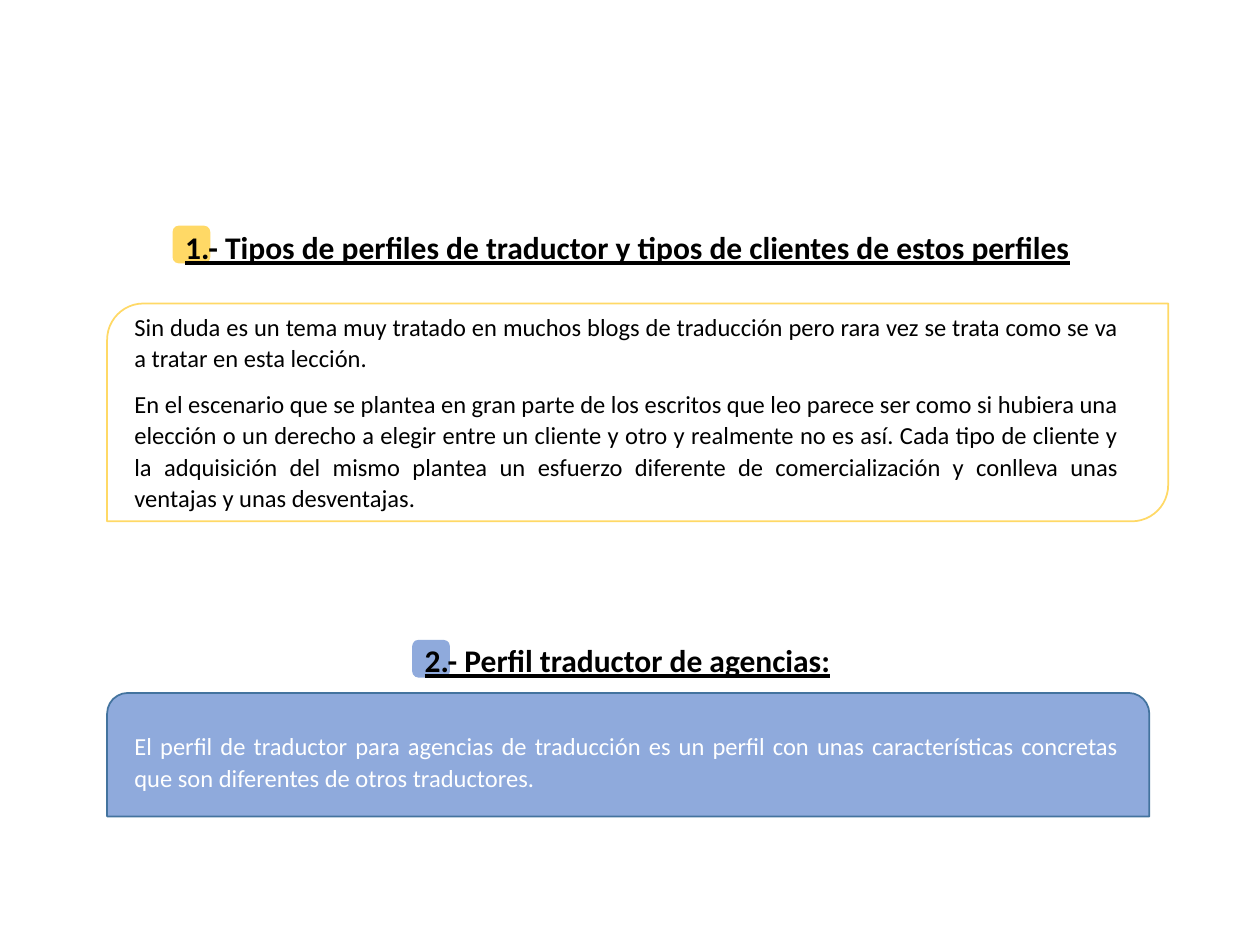
from typing import NamedTuple

from pptx import Presentation
from pptx.dml.color import RGBColor
from pptx.enum import shapes, text
from pptx.util import Cm, Pt

YELLOW, BLUE, DARK_BLUE = "FFD966", "8FAADC", "43739E"
BLACK, WHITE = "000000", "FFFFFF"


class Box(NamedTuple):
    """Left, top, width and height in centimetres."""
    left: float
    top: float
    width: float
    height: float

    def lengths(self):
        return [Cm(value) for value in self]


class Panel(NamedTuple):
    box: Box
    outline: shapes.MSO_SHAPE
    fill: str | None = None
    line: str | None = None


class Passage(NamedTuple):
    box: Box
    paragraphs: list[str]
    color: str = BLACK
    heading: bool = False
    wrap: bool = True


MARKER = 0.76
HEADING_HEIGHT = 1.09
PANEL_LEFT, TEXT_LEFT, TEXT_WIDTH = 2.16, 2.46, 20.35
INTRO_TOP, INTRO_HEIGHT = 6.12, 4.39

agency_panel = Panel(Box(PANEL_LEFT, 13.97, 21.01, 2.49),
                     shapes.MSO_SHAPE.ROUND_2_SAME_RECTANGLE, BLUE, DARK_BLUE)
markers = [Panel(Box(left, top, MARKER, MARKER), shapes.MSO_SHAPE.ROUNDED_RECTANGLE, fill)
           for left, top, fill in [(3.48, 4.55, YELLOW), (8.31, 12.9, BLUE)]]
intro_frame = Panel(Box(PANEL_LEFT, INTRO_TOP, 21.39, INTRO_HEIGHT),
                    shapes.MSO_SHAPE.ROUND_2_DIAG_RECTANGLE, line=YELLOW)

types_heading = Passage(
    Box(3.48, 4.42, 18.75, HEADING_HEIGHT),
    ["1.- Tipos de perfiles de traductor y tipos de clientes de estos perfiles"],
    heading=True)
intro = Passage(
    Box(TEXT_LEFT, INTRO_TOP, TEXT_WIDTH, INTRO_HEIGHT),
    ["Sin duda es un tema muy tratado en muchos blogs de traducción pero rara vez "
     "se trata como se va a tratar en esta lección.",
     "En el escenario que se plantea en gran parte de los escritos que leo parece ser "
     "como si hubiera una elección o un derecho a elegir entre un cliente y otro y "
     "realmente no es así. Cada tipo de cliente y la adquisición del mismo plantea un "
     "esfuerzo diferente de comercialización y conlleva unas ventajas y unas desventajas."])
agency_heading = Passage(Box(8.31, 12.75, 8.79, HEADING_HEIGHT),
                         ["2.- Perfil traductor de agencias:"], heading=True, wrap=False)
agency_text = Passage(
    Box(TEXT_LEFT, 14.58, TEXT_WIDTH, 1.55),
    ["El perfil de traductor para agencias de traducción es un perfil con unas "
     "características concretas que son diferentes de otros traductores."], WHITE)


def rgb(color: str) -> RGBColor:
    return RGBColor.from_string(color)


def draw_panel(slide, panel: Panel) -> None:
    shape = slide.shapes.add_shape(panel.outline, *panel.box.lengths())
    shape.shadow.inherit = False
    if panel.fill:
        shape.fill.solid()
        shape.fill.fore_color.rgb = rgb(panel.fill)
    else:
        shape.fill.background()
    if panel.line:
        shape.line.color.rgb = rgb(panel.line)
        shape.line.width = Pt(1)
    else:
        shape.line.fill.background()


def write(shape, passage: Passage) -> None:
    """Place the shape and fill it with the passage."""
    shape.left, shape.top, shape.width, shape.height = passage.box.lengths()
    frame = shape.text_frame
    frame.text = "\n".join(passage.paragraphs)
    frame.word_wrap = passage.wrap
    frame.auto_size = text.MSO_AUTO_SIZE.SHAPE_TO_FIT_TEXT
    frame.vertical_anchor = text.MSO_ANCHOR.TOP
    for paragraph in frame.paragraphs:
        paragraph.alignment = text.PP_ALIGN.LEFT if passage.heading else text.PP_ALIGN.JUSTIFY
        paragraph.line_spacing = 1.07
        paragraph.space_after = Pt(8)
        font = paragraph.font
        font.name = "Calibri"
        font.size = Pt(18 if passage.heading else 14)
        font.bold = font.underline = passage.heading
        font.color.rgb = rgb(passage.color)


def main() -> None:
    deck = Presentation()
    deck.slide_width, deck.slide_height = Cm(25.4), Cm(19.05)
    slide = deck.slides.add_slide(deck.slide_layouts.get_by_name("Title Only"))
    for panel in [agency_panel, *markers, intro_frame]:
        draw_panel(slide, panel)

    title = slide.shapes.title
    title.element.getparent().append(title.element)  # in front of its marker
    write(title, types_heading)
    for passage in [intro, agency_heading, agency_text]:
        write(slide.shapes.add_textbox(*passage.box.lengths()), passage)
    deck.save("out.pptx")


if __name__ == "__main__":
    main()
